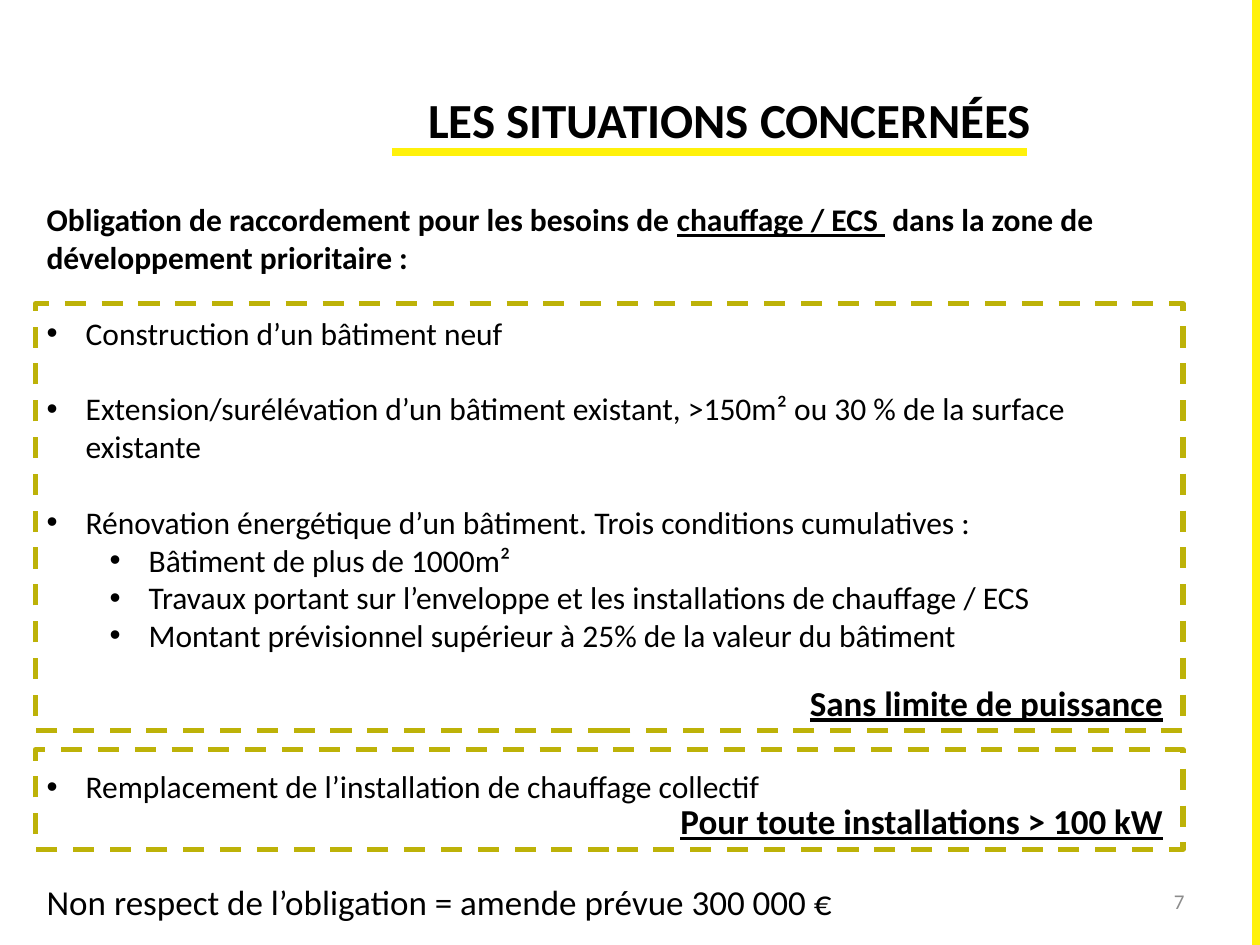
from dataclasses import dataclass

from lxml import etree
from pptx import Presentation
from pptx import util as u
from pptx.dml.color import RGBColor
from pptx.enum import dml, shapes, text
from pptx.oxml import ns


@dataclass(frozen=True)
class Theme:
    face: str = "Calibri"
    ink: str = "000000"
    grey: str = "8C8C8C"
    bar: str = "FFF10B"
    dash: str = "BDB208"
    title: float = 28
    body: float = 18
    note: float = 20
    page: float = 12
    gap: float = 21.6


@dataclass(frozen=True)
class Zone:
    top: float
    high: float
    note: str


@dataclass(frozen=True)
class Item:
    words: str
    level: int = 0
    gap: int = 0


THEME = Theme()
LEFT, WIDE = 0.28, 9.11
HANG = 0.31
ALIGN = text.PP_ALIGN

ZONES = [
    Zone(2.41, 3.39, "Sans limite de puissance"),
    Zone(5.95, 0.79, "Pour toute installations > 100 kW"),
]

ITEMS = [
    Item("Construction d’un bâtiment neuf", gap=1),
    Item("Extension/surélévation d’un bâtiment existant, >150m² ou 30 % "
         "de la surface existante", gap=1),
    Item("Rénovation énergétique d’un bâtiment. Trois conditions cumulatives :",
         gap=1),
    Item("Bâtiment de plus de 1000m²", level=1),
    Item("Travaux portant sur l’enveloppe et les installations de chauffage / ECS",
         level=1),
    Item("Montant prévisionnel supérieur à 25% de la valeur du bâtiment", level=1),
    Item("Remplacement de l’installation de chauffage collectif", gap=3),
]


def write(para, words: str, size: float = THEME.body, color: str = THEME.ink,
          bold: bool = False, under: bool = False, align=None) -> None:
    if align is not None:
        para.alignment = align
    run = para.add_run()
    run.text = words
    font = run.font
    font.name, font.size = THEME.face, u.Pt(size)
    font.bold, font.underline = bold, under
    font.color.rgb = RGBColor.from_string(color)


def add_box(slide, left: float, top: float, wide: float, high: float):
    box = slide.shapes.add_textbox(*map(u.Inches, (left, top, wide, high)))
    box.text_frame.word_wrap = True
    return box.text_frame


def add_bar(slide, x1: float, y1: float, x2: float, y2: float) -> None:
    bar = slide.shapes.add_connector(
        shapes.MSO_CONNECTOR.STRAIGHT, *map(u.Inches, (x1, y1, x2, y2)))
    bar.line.color.rgb = RGBColor.from_string(THEME.bar)
    bar.line.width = u.Pt(4.5)
    etree.SubElement(bar._element.spPr, ns.qn("a:effectLst"))


def add_item(frame, item: Item) -> None:
    para = frame.add_paragraph()
    para.level = item.level
    props = para._p.get_or_add_pPr()
    props.set("marL", str(u.Inches(HANG + item.level / 2)))
    props.set("indent", str(u.Inches(-HANG)))
    etree.SubElement(props, ns.qn("a:buFont")).set("typeface", "Arial")
    etree.SubElement(props, ns.qn("a:buChar")).set("char", "•")
    para.space_before = u.Pt(item.gap * THEME.gap)
    write(para, item.words)


def add_zone(slide, zone: Zone) -> None:
    rect = slide.shapes.add_shape(
        shapes.MSO_SHAPE.RECTANGLE,
        *map(u.Inches, (LEFT, zone.top, WIDE, zone.high)))
    rect.shadow.inherit = False
    rect.fill.background()
    rect.line.color.rgb = RGBColor.from_string(THEME.dash)
    rect.line.width = u.Pt(3)
    rect.line.dash_style = dml.MSO_LINE.DASH
    high = 0.44
    frame = add_box(slide, 3.82, zone.top + zone.high - high, 5.51, high)
    write(frame.paragraphs[0], zone.note, size=THEME.note, bold=True,
          under=True, align=ALIGN.RIGHT)


def add_title(slide, words: str) -> None:
    title = slide.shapes.title
    title.left, title.top, title.width, title.height = map(
        u.Inches, (2.08, 0.21, 7.42, 1.02))
    frame = title.text_frame
    frame.vertical_anchor = text.MSO_ANCHOR.BOTTOM
    write(frame.paragraphs[0], words, size=THEME.title, bold=True,
          align=ALIGN.CENTER)


def add_body(slide) -> None:
    frame = add_box(slide, LEFT, 1.55, WIDE, 5.95)
    frame.margin_left = frame.margin_right = u.Inches(0.09)
    frame.margin_top = frame.margin_bottom = u.Inches(0.04)
    lead = frame.paragraphs[0]
    write(lead, "Obligation de raccordement pour les besoins de ", bold=True)
    write(lead, "chauffage / ECS ", bold=True, under=True)
    write(lead, " dans la zone de développement prioritaire :", bold=True)
    for item in ITEMS:
        add_item(frame, item)
    last = frame.add_paragraph()
    last.space_before = u.Pt(2 * THEME.gap)
    write(last, "Non respect de l’obligation = amende prévue 300 000 €",
          size=THEME.note)


def main() -> None:
    deck = Presentation()
    deck.slide_width, deck.slide_height = u.Inches(10), u.Inches(7.5)
    slide = deck.slides.add_slide(deck.slide_layouts[5])
    add_bar(slide, 9.97, 7.5, 9.97, 0)
    add_bar(slide, 3.11, 1.21, 8.15, 1.21)
    add_title(slide, "LES SITUATIONS CONCERNÉES")
    page = add_box(slide, 7.17, 6.95, 2.33, 0.4)
    page.vertical_anchor = text.MSO_ANCHOR.MIDDLE
    write(page.paragraphs[0], "7", size=THEME.page, color=THEME.grey,
          align=ALIGN.RIGHT)
    add_body(slide)
    for zone in ZONES:
        add_zone(slide, zone)
    deck.save("out.pptx")


if __name__ == "__main__":
    main()
